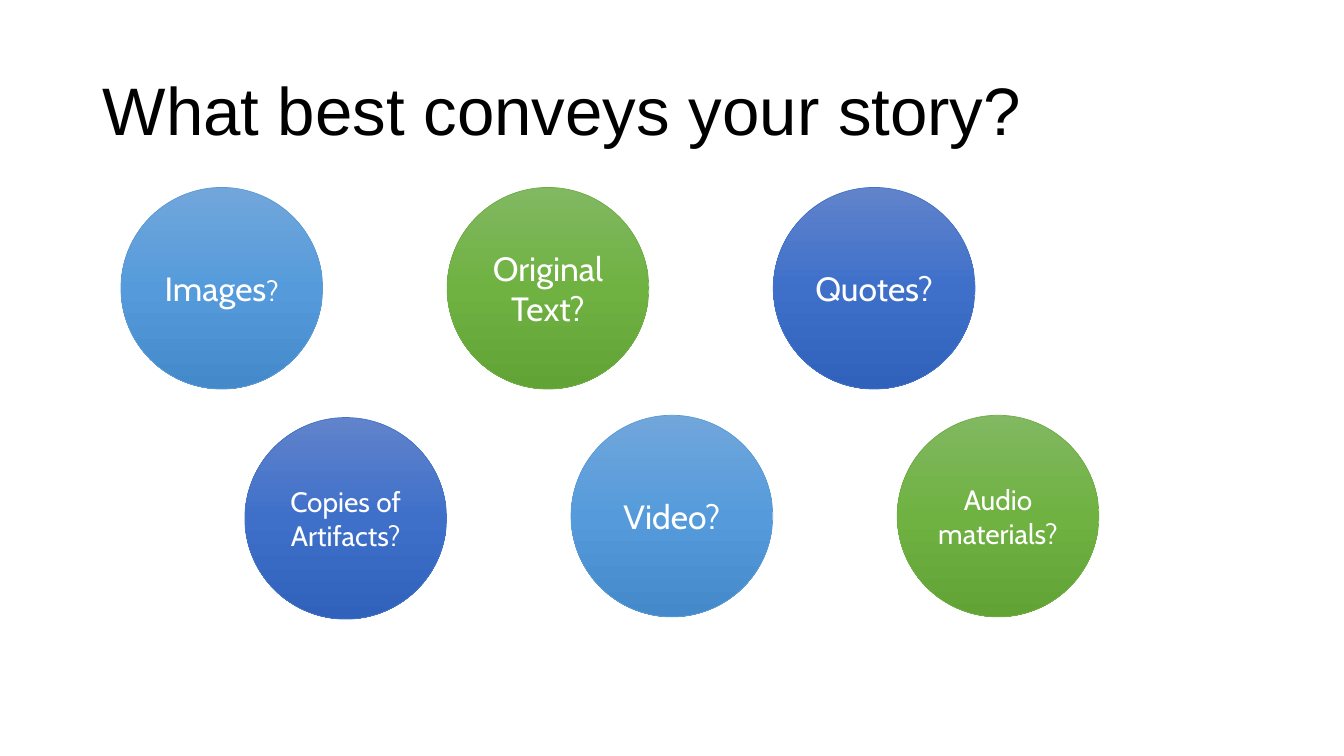
from copy import deepcopy

from pptx import Presentation
from pptx.dml.color import RGBColor
from pptx.enum.shapes import MSO_SHAPE as SHAPE
from pptx.enum.text import MSO_ANCHOR as ANCHOR, PP_ALIGN as ALIGN
from pptx.oxml.ns import qn
from pptx.util import Inches, Pt

LEFT, TOP, COL, ROW, SIZE = 1.2, 1.86, 3.235, 2.26, 2
SHIFT = 0.38
SKY = ("71A6DB", "559BDB", "448ACA", "5B9BD5")
GREEN = ("81B861", "6FB242", "62A336", "70AD47")
ROYAL = ("6183CB", "3E70CA", "3062BB", "4472C4")

CIRCLES = [
    (0, 0, SKY, [("Images", 24), ("?", 20)]),
    (SHIFT, 1.01, ROYAL, [("Copies of Artifacts?", 20)]),
    (2 + SHIFT, 1, GREEN, [("Audio materials?", 20)]),
    (2, 0, ROYAL, [("Quotes?", 24)]),
    (1, 0, GREEN, [("Original Text?", 24)]),
    (1 + SHIFT, 1, SKY, [("Video?", 24)]),
]


def rgb(value):
    """Turn a hex string into a colour."""
    return RGBColor.from_string(value)


def set_all(obj, values):
    """Set each attribute in a dict of format values."""
    for name, value in values.items():
        setattr(obj, name, value)


def write(tf, runs, font, color, margin, **layout):
    """Fill a text frame with one paragraph of sized runs."""
    sides = ("left", "right", "top", "bottom")
    set_all(tf, {"word_wrap": True, "vertical_anchor": ANCHOR.MIDDLE,
                 **{f"margin_{side}": Inches(margin) for side in sides}})
    p = tf.paragraphs[0]
    set_all(p, layout)
    for text, size in runs:
        r = p.add_run()
        r.text = text
        set_all(r.font, {"name": font, "size": Pt(size)})
        r.font.color.rgb = rgb(color)


def shade(fill, gradient, colors):
    """Apply an even gradient running from top to bottom."""
    fill.gradient()
    fill.gradient_angle = 270
    stops = gradient().find(qn("a:gsLst"))
    stops.append(deepcopy(stops[0]))
    for i, (stop, color) in enumerate(zip(fill.gradient_stops, colors)):
        stop.position = i / (len(colors) - 1)
        stop.color.rgb = rgb(color)


def add_title(s, text):
    """Add the slide title."""
    box = s.shapes.add_textbox(*map(Inches, (0.92, 0.4, 11.5, 1.45)))
    write(box.text_frame, [(text, 48)], "Arial", "000000", 0.1, line_spacing=0.9)


def add_circle(s, col, row, palette, runs):
    """Add a shaded circle with a label at a grid position."""
    *shades, edge = palette
    place = (LEFT + col * COL, TOP + row * ROW, SIZE, SIZE)
    sp = s.shapes.add_shape(SHAPE.OVAL, *map(Inches, place))
    sp.shadow.inherit = False
    shade(sp.fill, lambda: sp.element.spPr.find(qn("a:gradFill")), shades)
    sp.line.color.rgb = rgb(edge)
    sp.line.width = Pt(0.5)
    write(sp.text_frame, runs, "Cabin", "FFFFFF", 0.02, alignment=ALIGN.CENTER)


def main():
    """Build and save the slide."""
    prs = Presentation()
    set_all(prs, {"slide_width": Inches(13.33), "slide_height": Inches(7.5)})
    s = prs.slides.add_slide(prs.slide_layouts[6])
    add_title(s, "What best conveys your story?")
    for circle in CIRCLES:
        add_circle(s, *circle)
    prs.save("out.pptx")


if __name__ == "__main__":
    main()
